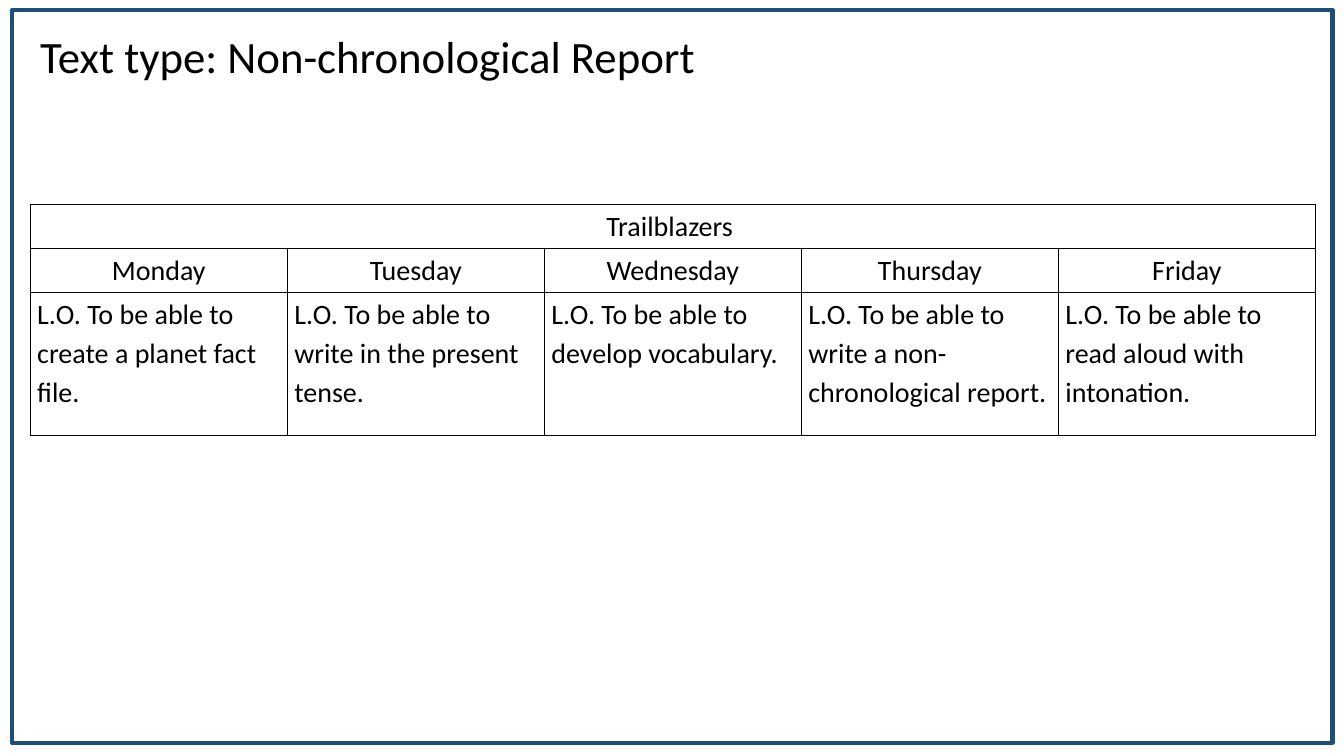
"""Build a weekly lesson overview slide with a framed timetable."""
import pptx
import pptx.dml.color
import pptx.enum.shapes
import pptx.enum.text
import pptx.oxml
import pptx.oxml.ns
import pptx.util

Pt = pptx.util.Pt
ALIGN = pptx.enum.text.PP_ALIGN
BLACK = pptx.dml.color.RGBColor(0x00, 0x00, 0x00)
FRAME_BLUE = pptx.dml.color.RGBColor(0x1F, 0x4E, 0x79)

LESSONS = {
    "Monday": "L.O. To be able to create a planet fact file.",
    "Tuesday": "L.O. To be able to write in the present tense.",
    "Wednesday": "L.O. To be able to develop vocabulary.",
    "Thursday": "L.O. To be able to write a non-chronological report.",
    "Friday": "L.O. To be able to read aloud with intonation.",
}
HEADING = {"alignment": ALIGN.CENTER}
OBJECTIVE = {"alignment": ALIGN.LEFT, "line_spacing": 1.15}
OBJECTIVE_MARGINS = {
    "margin_left": Pt(5), "margin_right": Pt(5),
    "margin_top": Pt(0), "margin_bottom": Pt(0),
}


def apply_format(target, values):
    for name, value in values.items():
        setattr(target, name, value)


class SlideBuilder:
    font_name = "Calibri"
    border_width = Pt(1)

    def __init__(self, slide):
        self.slide = slide

    def fill_paragraph(self, paragraph, text, size, values):
        run = paragraph.add_run()
        run.text = text
        apply_format(run.font, {"name": self.font_name, "size": Pt(size)})
        run.font.color.rgb = BLACK
        apply_format(paragraph, values)

    def frame(self, left, top, width, height):
        shape = self.slide.shapes.add_shape(
            pptx.enum.shapes.MSO_SHAPE.RECTANGLE,
            Pt(left), Pt(top), Pt(width), Pt(height))
        shape.shadow.inherit = False
        shape.fill.background()
        shape.line.color.rgb = FRAME_BLUE
        shape.line.width = Pt(3)

    def text(self, left, top, width, height, text, size):
        box = self.slide.shapes.add_textbox(
            Pt(left), Pt(top), Pt(width), Pt(height))
        box.text_frame.word_wrap = True
        self.fill_paragraph(box.text_frame.paragraphs[0], text, size, {})

    def border(self, cell):
        properties = cell._tc.get_or_add_tcPr()
        for side in "LRTB":
            properties.append(pptx.oxml.parse_xml(
                f'<a:ln{side} {pptx.oxml.ns.nsdecls("a")} w="{self.border_width}">'
                f'<a:solidFill><a:srgbClr val="{BLACK}"/></a:solidFill>'
                f'</a:ln{side}>'))

    def timetable(self, left, top, column_width, row_heights, title, lessons):
        columns = len(lessons)
        table = self.slide.shapes.add_table(
            len(row_heights), columns, Pt(left), Pt(top),
            Pt(column_width * columns), Pt(sum(row_heights))).table
        apply_format(table, {"first_row": False, "horz_banding": False})
        for column in table.columns:
            column.width = Pt(column_width)
        for row, height in zip(table.rows, row_heights):
            row.height = Pt(height)
        for cell in table.iter_cells():
            self.border(cell)
            cell.fill.background()
        title_cell = table.cell(0, 0)
        title_cell.merge(table.cell(0, columns - 1))
        self.fill_paragraph(title_cell.text_frame.paragraphs[0], title, 20, HEADING)
        for column, (day, objective) in enumerate(lessons.items()):
            day_cell = table.cell(1, column)
            objective_cell = table.cell(2, column)
            apply_format(objective_cell, OBJECTIVE_MARGINS)
            self.fill_paragraph(day_cell.text_frame.paragraphs[0], day, 20, HEADING)
            self.fill_paragraph(
                objective_cell.text_frame.paragraphs[0], objective, 20, OBJECTIVE)


def main():
    presentation = pptx.Presentation()
    apply_format(presentation, {"slide_width": Pt(960), "slide_height": Pt(540)})
    builder = SlideBuilder(presentation.slides.add_slide(presentation.slide_layouts[6]))
    builder.frame(8.6, 7.2, 943.2, 523.4)
    builder.text(21.6, 17.3, 795, 46, "Text type: Non-chronological Report", 32)
    builder.timetable(21.6, 146, 183.6, (31.4, 31.4, 102.2), "Trailblazers ", LESSONS)
    presentation.save("out.pptx")


if __name__ == "__main__":
    main()
